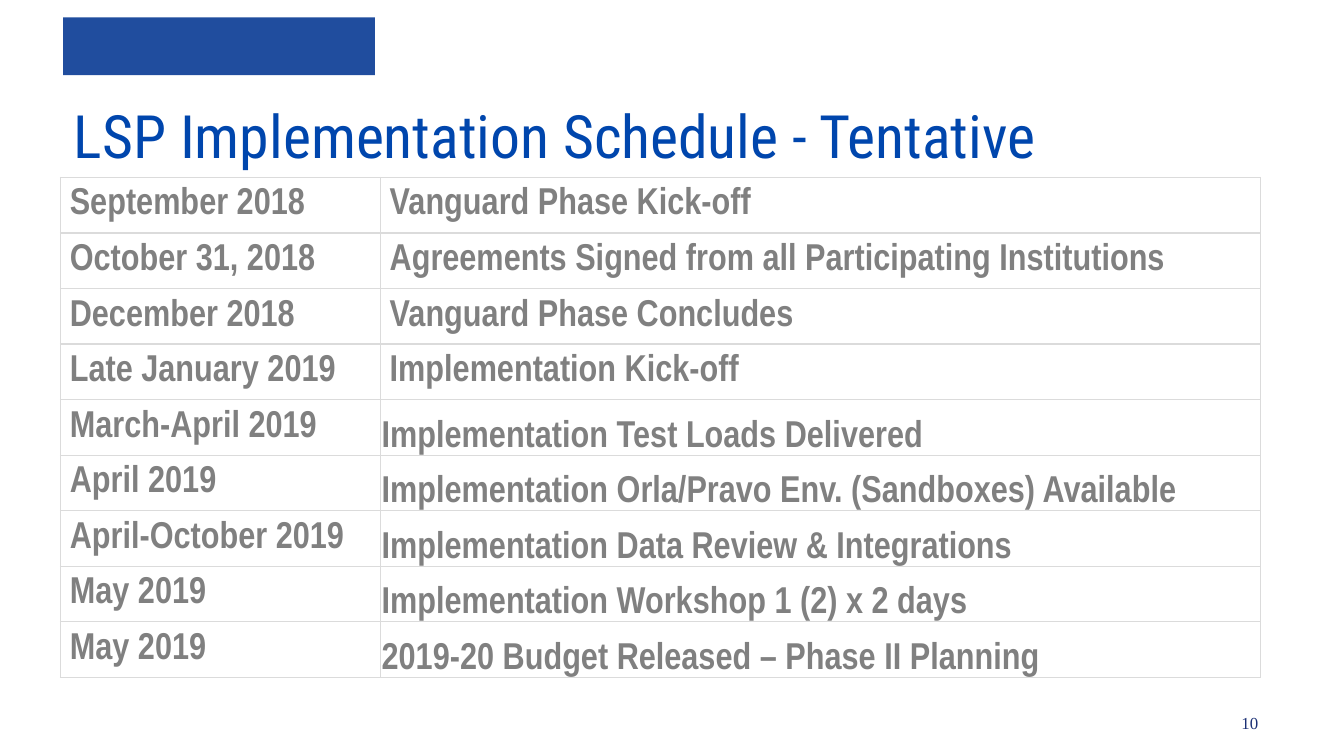
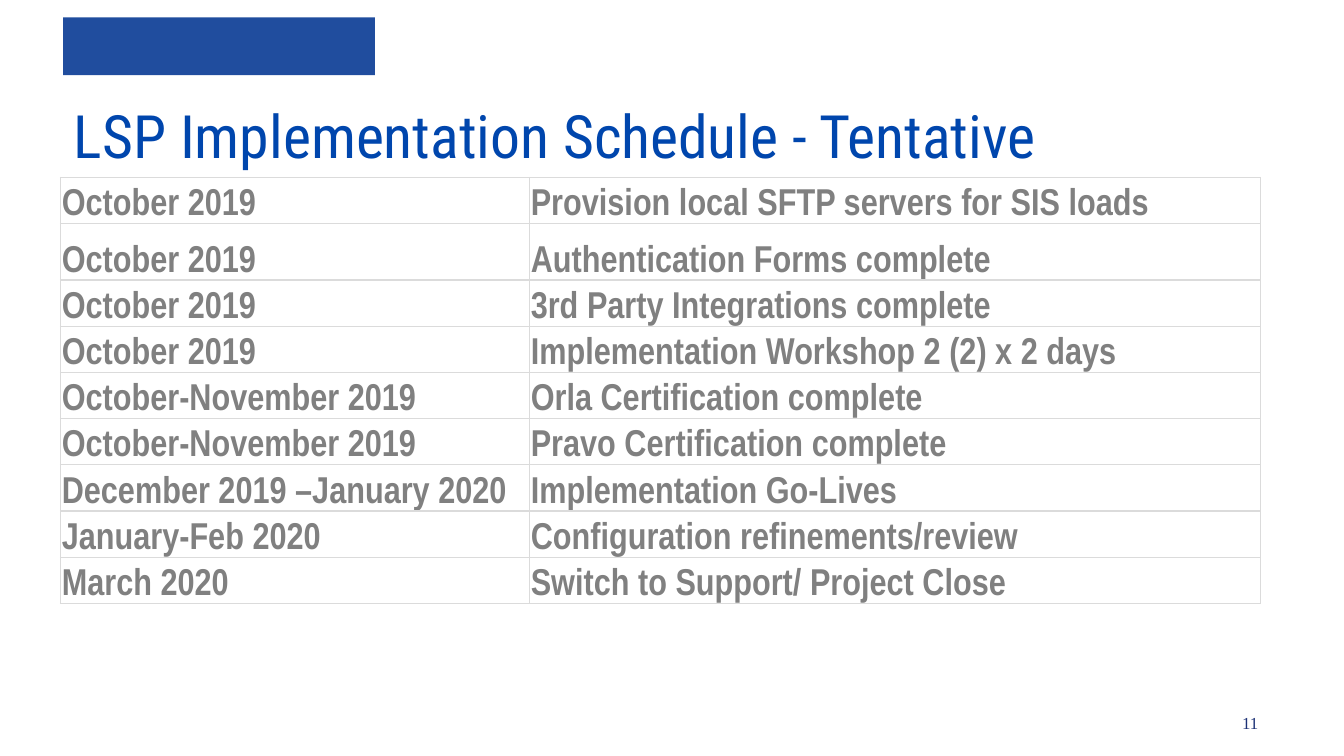
from lxml import etree
from pptx import Presentation
from pptx.dml.color import RGBColor
from pptx.enum.shapes import MSO_SHAPE
from pptx.enum.text import MSO_ANCHOR, PP_ALIGN
from pptx.oxml.ns import qn
from pptx.util import Inches, Pt

RECTANGLE = MSO_SHAPE.RECTANGLE
MIDDLE, BOTTOM = MSO_ANCHOR.MIDDLE, MSO_ANCHOR.BOTTOM
LEFT, RIGHT = PP_ALIGN.LEFT, PP_ALIGN.RIGHT

TITLE = "LSP Implementation Schedule - Tentative"
TITLE_ONLY = 5
COLUMNS = 100
ROWS = COLUMNS * 9 / 16
COLORS = {"band": "204D9E", "title": "0046AD", "number": "1B3075",
          "table": "808080", "border": "DBDBDB"}
ROOMY = (MIDDLE, (0.7, 0.4, 0.7, 0.4))
TIGHT = (BOTTOM, (0.1, 0.1, 0.1, 0))

SCHEDULES = [
    {
        "number": 10,
        "widths": (23.8, 65.5),
        "heights": [4.08] * 9,
        "roomy_rows": (9, 4),
        "entries": [
            ("September 2018", "Vanguard Phase Kick-off"),
            ("October 31, 2018", "Agreements Signed from all Participating Institutions"),
            ("December 2018", "Vanguard Phase Concludes"),
            ("Late January 2019", "Implementation Kick-off"),
            ("March-April 2019", "Implementation Test Loads Delivered"),
            ("April 2019", "Implementation Orla/Pravo Env. (Sandboxes) Available"),
            ("April-October 2019", "Implementation Data Review & Integrations"),
            ("May 2019", "Implementation Workshop 1 (2) x 2 days"),
            ("May 2019", "2019-20 Budget Released – Phase II Planning"),
        ],
    },
    {
        "number": 11,
        "widths": (34.9, 54.4),
        "heights": [3.44, 4.2] + [3.44] * 7,
        "roomy_rows": (0, 0),
        "entries": [
            ("October 2019", "Provision local SFTP servers for SIS loads"),
            ("October 2019", "Authentication Forms complete"),
            ("October 2019", "3rd Party Integrations complete"),
            ("October 2019", "Implementation Workshop 2 (2) x 2 days"),
            ("October-November 2019", "Orla Certification complete"),
            ("October-November 2019", "Pravo Certification complete"),
            ("December 2019 –January 2020", "Implementation Go-Lives"),
            ("January-Feb 2020", "Configuration refinements/review"),
            ("March 2020", "Switch to Support/ Project Close"),
        ],
    },
]


def grid(units):
    return Inches(units * 10 / COLUMNS)


class Deck:
    def __init__(self):
        self.presentation = Presentation()
        self.presentation.slide_width = grid(COLUMNS)
        self.presentation.slide_height = grid(ROWS)
        self.slide = None

    def add_slide(self, number):
        layout = self.presentation.slide_layouts[TITLE_ONLY]
        self.slide = self.presentation.slides.add_slide(layout)
        self.page_number(number)
        self.band()
        self.title(TITLE)

    def format_text(self, text_frame, font_name, size, color, bold=False, alignment=LEFT):
        for paragraph in text_frame.paragraphs:
            paragraph.alignment = alignment
            for run in paragraph.runs:
                run.font.name = font_name
                run.font.size = Pt(size)
                run.font.bold = bold
                run.font.color.rgb = RGBColor.from_string(COLORS[color])

    def page_number(self, number):
        box = self.slide.shapes.add_textbox(grid(79.7), grid(52.5), grid(14.9), grid(2.5))
        box.text_frame.word_wrap = True
        box.text_frame.text = str(number)
        self.format_text(box.text_frame, "Times New Roman", 9, "number", alignment=RIGHT)

    def band(self):
        shape = self.slide.shapes.add_shape(
            RECTANGLE, grid(4.7), grid(1.3), grid(23.2), grid(4.3))
        shape.shadow.inherit = False
        shape.fill.solid()
        shape.fill.fore_color.rgb = RGBColor.from_string(COLORS["band"])
        shape.line.fill.background()

    def title(self, text):
        title = self.slide.shapes.title
        title.left, title.top = grid(4.5), grid(6.8)
        title.width, title.height = grid(90.5), grid(6.4)
        title.text_frame.text = text
        title.text_frame.vertical_anchor = MIDDLE
        self.format_text(title.text_frame, "Roboto Condensed", 32, "title")

    def border(self, cell):
        properties = cell._tc.get_or_add_tcPr()
        for side in ("lnL", "lnR", "lnT", "lnB"):
            line = etree.SubElement(properties, qn(f"a:{side}"), w=str(Pt(0.75)))
            fill = etree.SubElement(line, qn("a:solidFill"))
            etree.SubElement(fill, qn("a:srgbClr"), val=COLORS["border"])

    def cell(self, cell, text, style):
        cell.text_frame.text = text
        cell.vertical_anchor, margins = style
        (cell.margin_left, cell.margin_top,
         cell.margin_right, cell.margin_bottom) = map(grid, margins)
        self.format_text(cell.text_frame, "Arial Narrow", 20, "table", bold=True)
        self.border(cell)
        cell.fill.background()

    def table(self, entries, widths, heights, roomy_rows):
        table = self.slide.shapes.add_table(
            len(entries), len(widths), grid(4.5), grid(13.2),
            grid(sum(widths)), grid(sum(heights))).table
        table.first_row = table.horz_banding = False
        for column, width in zip(table.columns, widths):
            column.width = grid(width)
        for row, height in zip(table.rows, heights):
            row.height = grid(height)
        for row_index, entry in enumerate(entries):
            for column_index, text in enumerate(entry):
                style = ROOMY if row_index < roomy_rows[column_index] else TIGHT
                self.cell(table.cell(row_index, column_index), text, style)


def main():
    deck = Deck()
    for schedule in SCHEDULES:
        deck.add_slide(schedule["number"])
        deck.table(schedule["entries"], schedule["widths"],
                   schedule["heights"], schedule["roomy_rows"])
    deck.presentation.save("out.pptx")


if __name__ == "__main__":
    main()
